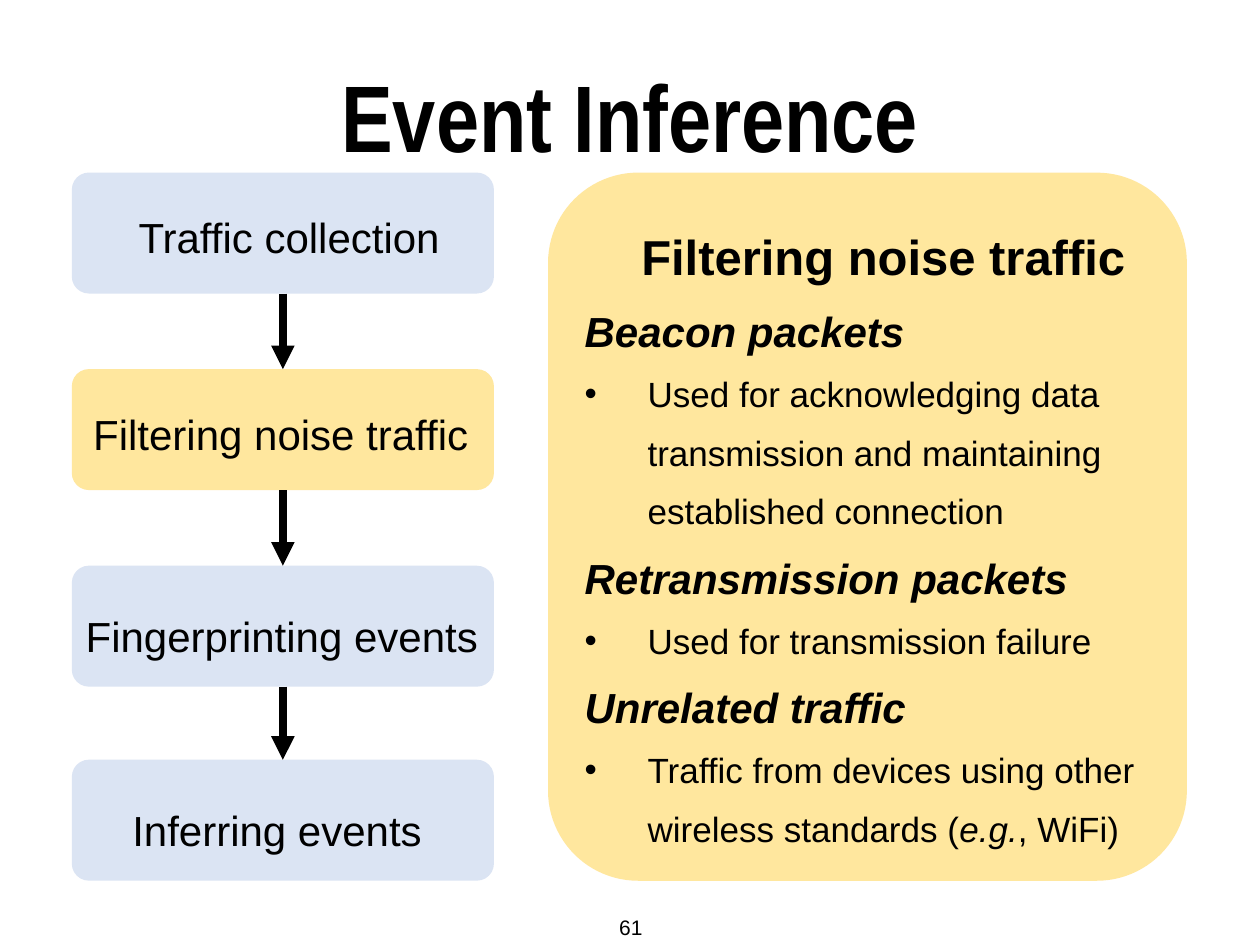
from itertools import pairwise

from lxml.etree import SubElement
from pptx import Presentation
from pptx.dml.color import RGBColor
from pptx.enum.shapes import MSO_CONNECTOR, MSO_SHAPE
from pptx.enum.text import MSO_ANCHOR, MSO_AUTO_SIZE, PP_ALIGN
from pptx.oxml.ns import qn
from pptx.util import Emu, Pt

PX = 9144  # 100 px to the inch
BLACK, BLUE, YELLOW = "000000", "DAE3F3", "FFE699"


def px(n):
    return Emu(n * PX)


def color(value):
    return RGBColor.from_string(value)


def add_run(p, text, size=24, font="Arial", bold=False, italic=False):
    r = p.add_run()
    r.text = text
    r.font.size = Pt(size)
    r.font.name = font
    r.font.bold = bold
    r.font.italic = italic
    r.font.color.rgb = color(BLACK)


def add_bullet(p, indent):
    pPr = p._p.get_or_add_pPr()
    pPr.set("marL", str(px(indent)))
    pPr.set("indent", str(-px(indent)))
    SubElement(pPr, qn("a:buFont"), typeface="Arial")
    SubElement(pPr, qn("a:buChar"), char="•")


class SlideBuilder:
    inset = 5
    corner = 0.141
    opacity = 95
    line_width = 4.5

    def __init__(self, slide):
        self.s = slide

    def box(self, x, y, w, h, fill):
        sp = self.s.shapes.add_shape(MSO_SHAPE.ROUNDED_RECTANGLE, px(x), px(y), px(w), px(h))
        sp.adjustments[0] = self.corner
        sp.shadow.inherit = False
        sp.fill.solid()
        sp.fill.fore_color.rgb = color(fill)
        clr = sp.fill._xPr.find(qn("a:solidFill"))[0]
        SubElement(clr, qn("a:alpha"), val=str(self.opacity * 1000))
        sp.line.fill.background()
        return sp

    def arrow(self, upper, lower):
        c = self.s.shapes.add_connector(MSO_CONNECTOR.STRAIGHT, 0, 0, 0, 0)
        c.begin_connect(upper, 2)
        c.end_connect(lower, 0)
        c.line.color.rgb = color(BLACK)
        c.line.width = Pt(self.line_width)
        SubElement(c.line._get_or_add_ln(), qn("a:tailEnd"), type="triangle")
        SubElement(c._element.spPr, qn("a:effectLst"))

    def text(self, x, y, w, h, paragraphs, spacing=1.4, anchor=MSO_ANCHOR.TOP, grow=True, wrap=True):
        """Each paragraph is (runs, align, bullet indent); each run is (text, format)."""
        tf = self.s.shapes.add_textbox(px(x), px(y), px(w), px(h)).text_frame
        tf.word_wrap = wrap
        tf.auto_size = MSO_AUTO_SIZE.SHAPE_TO_FIT_TEXT if grow else MSO_AUTO_SIZE.NONE
        tf.vertical_anchor = anchor
        tf.margin_left = tf.margin_right = tf.margin_top = tf.margin_bottom = px(self.inset)
        for i, (runs, align, indent) in enumerate(paragraphs):
            p = tf.add_paragraph() if i else tf.paragraphs[0]
            if indent:
                add_bullet(p, indent)
            p.alignment = align
            p.line_spacing = spacing
            for words, style in runs:
                add_run(p, words, **style)


def main():
    prs = Presentation()
    prs.slide_width, prs.slide_height = px(1000), px(750)
    b = SlideBuilder(prs.slides.add_slide(prs.slide_layouts[6]))
    left, center, right = PP_ALIGN.LEFT, PP_ALIGN.CENTER, PP_ALIGN.RIGHT

    # Title
    title = [("Event Inference", dict(size=54, font="Arial Narrow", bold=True))]
    b.text(0, 54, 1000, 87, [(title, center, 0)],
           spacing=1.1, anchor=MSO_ANCHOR.BOTTOM, grow=False)

    # Flow: box top, fill, label, label left, label top, label width
    steps = [
        (137, BLUE, "Traffic collection", 105, 147, 257),
        (293, YELLOW, "Filtering noise traffic", 69, 303, 314),
        (449, BLUE, "Fingerprinting events", 63, 464, 322),
        (603, BLUE, "Inferring events", 100, 618, 249),
    ]
    boxes = []
    for top, fill, label, x, y, w in steps:
        boxes.append(b.box(57, top, 335, 96, fill))
        b.text(x, y, w, 67, [([(label, {})], left, 0)])
    for upper, lower in pairwise(boxes):
        b.arrow(upper, lower)

    # Detail panel
    b.box(435, 137, 507, 562, YELLOW)
    plain, slanted = dict(size=20), dict(size=20, italic=True)
    topics = [
        ("Beacon packets", [("Used for acknowledging data transmission and "
                             "maintaining established connection", plain)]),
        ("Retransmission packets", [("Used for transmission failure", plain)]),
        ("Unrelated traffic", [("Traffic from devices using other wireless standards (", plain),
                               ("e.g.", slanted), (", WiFi)", plain)]),
    ]
    details = [([("Filtering noise traffic", dict(size=28, bold=True))], center, 0)]
    for heading, runs in topics:
        details.append(([(heading, dict(bold=True, italic=True))], left, 0))
        details.append((runs, left, 50))
    b.text(459, 156, 484, 528, details)

    # Page number
    b.text(484, 721, 31, 30, [([("61", dict(size=12))], right, 0)],
           spacing=1.0, anchor=MSO_ANCHOR.MIDDLE, wrap=False)

    prs.save("out.pptx")


if __name__ == "__main__":
    main()
